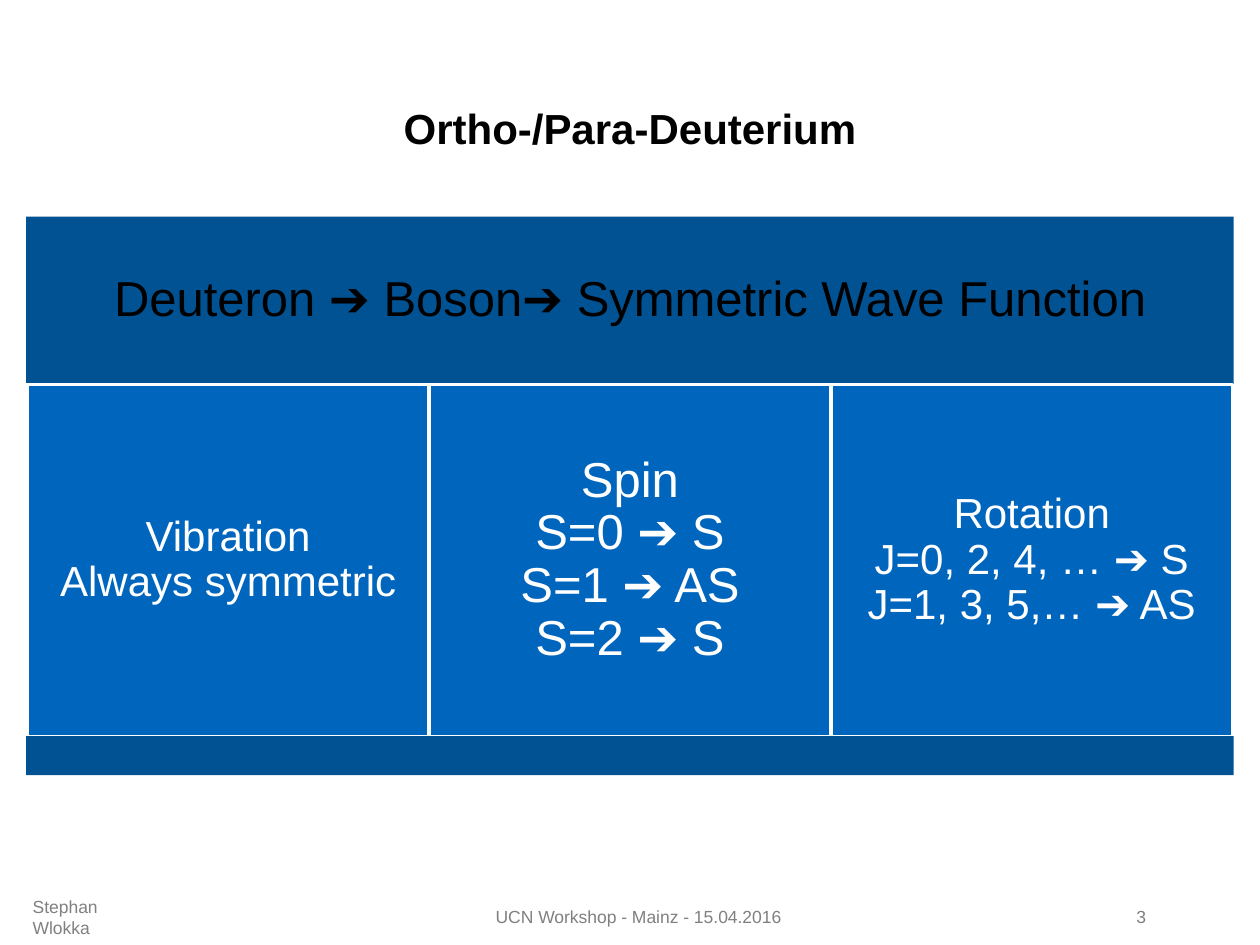
from pptx import Presentation
from pptx.dml.color import RGBColor
from pptx.enum.shapes import MSO_SHAPE
from pptx.enum.text import MSO_ANCHOR, PP_ALIGN
from pptx.util import Cm, Pt

RECT = MSO_SHAPE.RECTANGLE
TOP, MIDDLE = MSO_ANCHOR.TOP, MSO_ANCHOR.MIDDLE
LEFT, CENTER = PP_ALIGN.LEFT, PP_ALIGN.CENTER

DARK, BLUE, WHITE, BLACK, GRAY = "005293", "0065BD", "FFFFFF", "000000", "808080"

TITLE = "Ortho-/Para-Deuterium"
HEAD = "Deuteron ➔ Boson➔ Symmetric Wave Function"
# lines, text size, inset
PARTS = [
    (["Vibration", "Always symmetric"], 24, 0.25),
    (["Spin", "S=0 ➔ S", "S=1 ➔ AS", "S=2 ➔ S"], 28, 0.3),
    (["Rotation", "J=0, 2, 4, … ➔ S", "J=1, 3, 5,… ➔ AS"], 24, 0.25),
]
# text, left, width, alignment
FOOT = [
    ("Stephan Wlokka", 0.41, 2.62, LEFT),
    ("UCN Workshop - Mainz - 15.04.2016", 3.23, 19.28, CENTER),
    ("3", 22.66, 2.06, LEFT),
]
EDGE, WIDE = 0.53, 24.34
HEAD_Y, HEAD_H = 4.37, 3.38
PART_Y, PART_H = 7.75, 7.1
BASE_Y, BASE_H = 14.84, 0.79
FOOT_Y, FOOT_H = 18.06, 0.84


def tint(code):
    return RGBColor.from_string(code)


def write(shape, lines, size, color, align=CENTER, bold=False, gap=None):
    """Fill the shape with one paragraph, its lines split by breaks."""
    frame = shape.text_frame
    frame.word_wrap = True
    frame.vertical_anchor = MIDDLE
    para = frame.paragraphs[0]
    para.alignment = align
    if gap:
        para.line_spacing = gap
    for i, line in enumerate(lines):
        if i:
            para.add_line_break()
        run = para.add_run()
        run.text = line
        font = run.font
        font.name, font.size, font.bold = "Arial", Pt(size), bold
        font.color.rgb = tint(color)
    return frame


def block(x, y, w, h, fill, edge=None):
    box = slide.shapes.add_shape(RECT, Cm(x), Cm(y), Cm(w), Cm(h))
    box.shadow.inherit = False
    box.fill.solid()
    box.fill.fore_color.rgb = tint(fill)
    if edge:
        box.line.color.rgb = tint(edge)
        box.line.width = Pt(2)
    else:
        box.line.fill.background()
    return box


def inset(frame, size):
    frame.margin_left = frame.margin_right = Cm(size)
    frame.margin_top = frame.margin_bottom = Cm(size)


deck = Presentation()
deck.slide_width, deck.slide_height = Cm(25.4), Cm(19.05)
slide = deck.slides.add_slide(deck.slide_layouts[5])

title = slide.shapes.title
title.left, title.top = Cm(EDGE), Cm(1.85)
title.width, title.height = Cm(WIDE), Cm(1.65)
frame = write(title, [TITLE], 24, BLACK, bold=True)
frame.vertical_anchor = TOP
frame.margin_top = Cm(0.22)

for text, x, w, align in FOOT:
    box = slide.shapes.add_textbox(Cm(x), Cm(FOOT_Y), Cm(w), Cm(FOOT_H))
    write(box, [text], 10, GRAY, align)

head = block(EDGE, HEAD_Y, WIDE, HEAD_H, DARK)
inset(write(head, [HEAD], 28, BLACK, gap=0.9), 0.3)

step = (WIDE - 0.04) / len(PARTS)
for i, (lines, size, pad) in enumerate(PARTS):
    part = block(EDGE + 0.02 + i * step, PART_Y, step, PART_H, BLUE, WHITE)
    inset(write(part, lines, size, WHITE, gap=0.9), pad)

block(EDGE, BASE_Y, WIDE, BASE_H, DARK)

deck.save("out.pptx")
